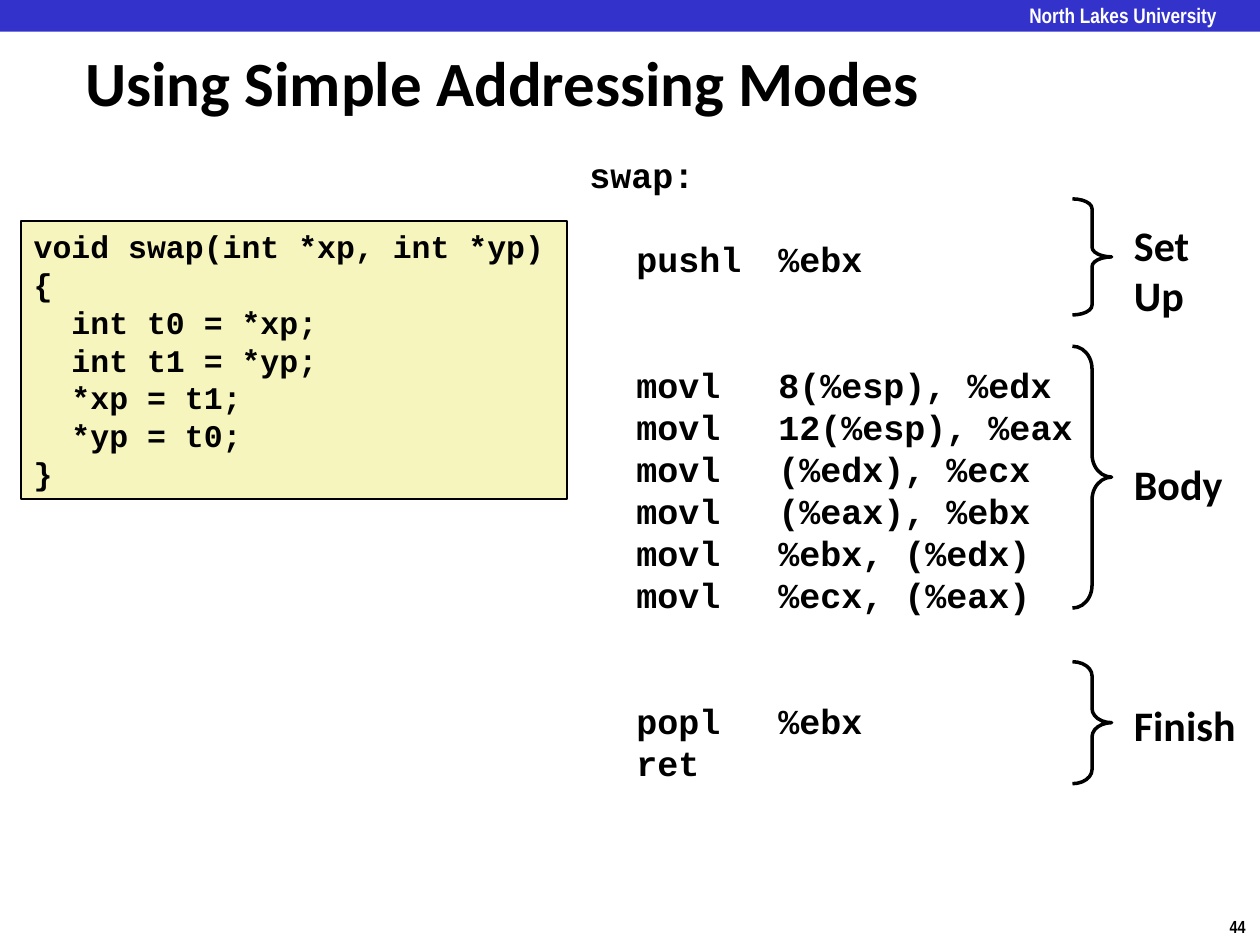
from lxml import etree
from pptx import Presentation
from pptx.dml.color import RGBColor
from pptx.enum.shapes import MSO_SHAPE
from pptx.enum.text import MSO_ANCHOR
from pptx.oxml.ns import qn
from pptx.util import Cm, Pt

RECTANGLE = MSO_SHAPE.RECTANGLE
RIGHT_BRACE = MSO_SHAPE.RIGHT_BRACE
MIDDLE = MSO_ANCHOR.MIDDLE

# Content
TITLE = "Using Simple Addressing Modes"
SCHOOL = "North Lakes University"
PAGE_NUMBER = "44"
C_CODE = [
    "void swap(int *xp, int *yp)",
    "{",
    "  int t0 = *xp;",
    "  int t1 = *yp;",
    "  *xp = t1;",
    "  *yp = t0;",
    "}",
]
# Each block: free lines above it, then its instructions
ASSEMBLY = [
    (0, ["swap:"]),
    (1, ["\tpushl\t%ebx"]),
    (2, ["\tmovl\t8(%esp), %edx", "\tmovl\t12(%esp), %eax",
         "\tmovl\t(%edx), %ecx", "\tmovl\t(%eax), %ebx",
         "\tmovl\t%ebx, (%edx)", "\tmovl\t%ecx, (%eax)"]),
    (2, ["\tpopl\t%ebx", "\tret"]),
]
# Label lines, label (top, width, height), brace (top, height, curl), in cm
STAGES = [
    (["Set", "Up"], (4.29, 1.65, 2.31), (4.01, 2.34, 0.25)),
    (["Body"], (9.12, 2.31, 1.27), (6.98, 5.28, 0.58)),
    (["Finish"], (13.97, 2.59, 1.27), (13.34, 2.46, 0.36)),
]
BRACE_LEFT, BRACE_WIDTH, LABEL_LEFT = 21.62, 0.79, 22.61
TAB_STOPS = (0.95, 3.81)
INSETS = (0.25, 0.13, 0.25, 0.13)
CODE_LEADING = 1.2

THEME = {
    "ink": RGBColor(0, 0, 0),
    "white": RGBColor(255, 255, 255),
    "bar": RGBColor(0x33, 0x33, 0xCC),
    "panel": RGBColor(0xF6, 0xF5, 0xBD),
    "title": ("Calibri", 36),
    "label": ("Calibri", 24),
    "assembly": ("Courier New", 20),
    "c_code": ("Courier New", 18),
    "school": ("Arial Narrow", 12),
    "number": ("Arial Narrow", 10),
}


def add_shape(page, kind, place, fill=None, line_width=None):
    shape = page.shapes.add_shape(kind, *map(Cm, place))
    shape.shadow.inherit = False
    if fill is None:
        shape.fill.background()
    else:
        shape.fill.solid()
        shape.fill.fore_color.rgb = fill
    if line_width is None:
        shape.line.fill.background()
    else:
        shape.line.color.rgb = THEME["ink"]
        shape.line.width = Pt(line_width)
    return shape


def write(box, lines, style, color=THEME["ink"], insets=INSETS, wrap=True,
          anchor=MSO_ANCHOR.TOP):
    """Fill a box with one left-aligned bold paragraph per line."""
    frame = box.text_frame
    frame.word_wrap = wrap
    frame.vertical_anchor = anchor
    (frame.margin_left, frame.margin_top,
     frame.margin_right, frame.margin_bottom) = map(Cm, insets)
    font_name, size = THEME[style]
    for index, line in enumerate(lines):
        para = frame.add_paragraph() if index else frame.paragraphs[0]
        para.alignment = 1
        span = para.add_run()
        span.text = line
        span.font.name = font_name
        span.font.size = Pt(size)
        span.font.bold = True
        span.font.color.rgb = color
    return frame.paragraphs


def add_text(page, place, lines, style, **options):
    box = page.shapes.add_textbox(*map(Cm, place))
    return write(box, lines, style, **options)


def set_tabs(para):
    tab_list = etree.SubElement(para._p.get_or_add_pPr(), qn("a:tabLst"))
    for stop in TAB_STOPS:
        etree.SubElement(tab_list, qn("a:tab"), pos=str(Cm(stop)), algn="l")


def set_leading(paras, style):
    leading = Pt(THEME[style][1] * CODE_LEADING)
    for para in paras:
        para.line_spacing = leading
    return leading


def main():
    deck = Presentation()
    deck.slide_width, deck.slide_height = Cm(25.4), Cm(19.05)
    page = deck.slides.add_slide(deck.slide_layouts[6])

    # Page furniture
    add_text(page, (24.54, 18.34, 0.86, 0.69), [PAGE_NUMBER], "number", wrap=False)
    add_shape(page, RECTANGLE, (0, 0, 25.4, 0.64), THEME["bar"])
    add_text(page, (20.75, 0.05, 4.24, 0.48), [SCHOOL], "school",
             color=THEME["white"], insets=(0, 0, 0, 0))
    add_text(page, (1.47, 0.84, 21.29, 1.6), [TITLE], "title", anchor=MIDDLE)

    # C source panel
    panel = add_shape(page, RECTANGLE, (0.43, 4.45, 11, 5.61), THEME["panel"], 1)
    set_leading(write(panel, C_CODE, "c_code"), "c_code")

    # Stage braces and labels
    for lines, (top, width, height), (brace_top, brace_height, curl) in STAGES:
        brace = add_shape(page, RIGHT_BRACE,
                          (BRACE_LEFT, brace_top, BRACE_WIDTH, brace_height),
                          line_width=2)
        brace.adjustments[0] = curl
        add_text(page, (LABEL_LEFT, top, width, height), lines, "label", wrap=False)

    # Assembly listing
    listing = [line for _, block in ASSEMBLY for line in block]
    paras = add_text(page, (11.63, 2.97, 11.63, 13.08), listing, "assembly")
    leading = set_leading(paras, "assembly")
    first = 0
    for free_lines, block in ASSEMBLY:
        paras[first].space_before = leading * free_lines
        first += len(block)
    for para in paras:
        set_tabs(para)

    deck.save("out.pptx")


if __name__ == "__main__":
    main()
